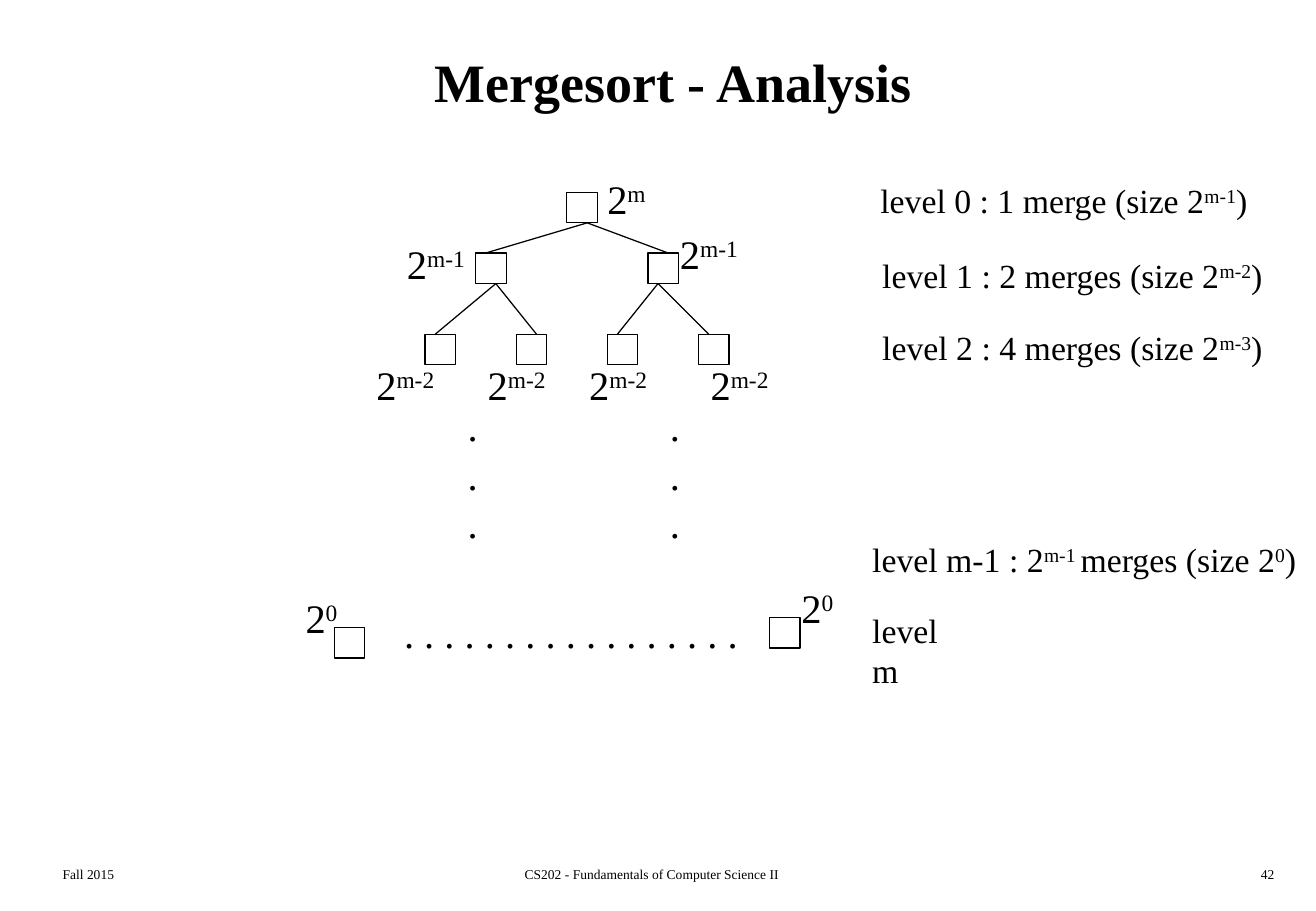
"""Build the slide that counts the merges on each level of a mergesort tree."""
from dataclasses import dataclass

from pptx import Presentation
from pptx.dml.color import RGBColor
from pptx.enum.shapes import MSO_CONNECTOR as Link, MSO_SHAPE as Kind
from pptx.enum.text import MSO_ANCHOR as Anchor, PP_ALIGN as Align
from pptx.oxml.ns import qn
from pptx.slide import Slide
from pptx.text.text import Font
from pptx.util import Cm, Pt
from lxml.etree import SubElement

BLACK = RGBColor(0x00, 0x00, 0x00)
WHITE = RGBColor(0xFF, 0xFF, 0xFF)
FACE = "Times New Roman"
SIDE = 0.64
THIN = Pt(0.75)
LEAD = 1.2


@dataclass
class Node:
    """A square of the tree, placed in centimetres."""
    left: float
    top: float


@dataclass
class Fork:
    """A parent point with the ends of its two branches."""
    x: float
    y: float
    ends: tuple[float, float]
    base: float


@dataclass
class Note:
    """A text whose superscripts stand between carets."""
    text: str
    left: float
    top: float
    width: float
    size: int = 24
    align: Align = Align.LEFT
    wrap: bool = False


NODES = [
    Node(11.85, 4.02),
    Node(9.95, 5.29), Node(13.55, 5.29),
    *[Node(8.89 + 1.905 * i, 6.99) for i in range(4)],
    Node(16.09, 12.91), Node(6.99, 13.12),
]
FORKS = [
    Fork(12.28, 4.66, (10.16, 13.97), 5.29),
    Fork(10.37, 5.93, (9.1, 11.22), 6.99),
    Fork(13.76, 5.93, (12.91, 14.82), 6.99),
]
NOTES = [
    Note("2^m", 12.45, 3.51, 1.37),
    Note("2^m-1", 8.26, 4.87, 1.85),
    Note("2^m-1", 13.97, 4.66, 1.85),
    *[Note("2^m-2", x, 7.41, 1.85) for x in (7.62, 9.95, 12.07, 14.61)],
    *[Note(".\n.\n.", x, 8.26, 0.71) for x in (9.53, 13.76)],
    Note("2^0", 6.14, 12.28, 1.22),
    Note("2^0", 16.51, 12.07, 1.22),
    Note(". . . . . . . . . . . . . . . . .", 8.2, 12.6, 7.49),
    Note("level 0 : 1 merge (size 2^m-1^)", 18.16, 3.63, 8.43, 20),
    Note("level 1 : 2 merges (size 2^m-2^)", 18.2, 5.21, 8.71, 20),
    Note("level 2 : 4 merges (size 2^m-3^)", 18.2, 6.7, 8.71, 20),
    Note("level m-1 : 2^m-1 ^merges (size 2^0^)", 17.99, 11.15, 9.65, 20),
    Note("level m", 17.99, 12.62, 2.59, 20),
    Note("Fall 2015", 1.06, 17.99, 5.74, 8, Align.LEFT, True),
    Note("CS202 - Fundamentals of Computer Science II",
         8.48, 17.99, 10.31, 8, Align.CENTER, True),
    Note("42", 21.16, 17.99, 5.74, 8, Align.RIGHT, True),
]


def style(font: Font, size: int, bold: bool = False) -> None:
    """Give a font the look of the slide."""
    font.name = FACE
    font.size = Pt(size)
    font.bold = bold
    font.color.rgb = BLACK


def head(slide: Slide, text: str) -> None:
    """Place and format the title."""
    title = slide.shapes.title
    title.left, title.top = Cm(1.06), Cm(0.42)
    title.width, title.height = Cm(26.04), Cm(2.54)
    frame = title.text_frame
    frame.text = text
    frame.vertical_anchor = Anchor.MIDDLE
    para = frame.paragraphs[0]
    para.alignment = Align.CENTER
    style(para.runs[0].font, 32, True)


def square(slide: Slide, node: Node) -> None:
    """Draw one node of the tree."""
    box = slide.shapes.add_shape(
        Kind.RECTANGLE, Cm(node.left), Cm(node.top), Cm(SIDE), Cm(SIDE))
    box.shadow.inherit = False
    box.fill.solid()
    box.fill.fore_color.rgb = WHITE
    box.line.color.rgb = BLACK
    box.line.width = THIN


def branch(slide: Slide, fork: Fork) -> None:
    """Draw the two lines below a parent."""
    for end in fork.ends:
        line = slide.shapes.add_connector(
            Link.STRAIGHT, Cm(fork.x), Cm(fork.y), Cm(end), Cm(fork.base))
        line.line.color.rgb = BLACK
        line.line.width = THIN
        SubElement(line._element.spPr, qn("a:effectLst"))


def write(slide: Slide, note: Note) -> None:
    """Write a text with its superscripts."""
    rows = note.text.split("\n")
    tall = Pt(LEAD * note.size * len(rows)) + Cm(0.25)
    box = slide.shapes.add_textbox(
        Cm(note.left), Cm(note.top), Cm(note.width), tall)
    frame = box.text_frame
    frame.text = "\n".join([""] * len(rows))
    frame.word_wrap = note.wrap
    for para, row in zip(frame.paragraphs, rows):
        para.alignment = note.align
        para.line_spacing = Pt(LEAD * note.size)
        for i, part in enumerate(filter(None, row.split("^"))):
            run = para.add_run()
            run.text = part
            style(run.font, note.size)
            if i % 2:
                run.font._element.set("baseline", "30000")


def main() -> None:
    """Build and save the slide."""
    deck = Presentation()
    deck.slide_width, deck.slide_height = Cm(27.52), Cm(19.05)
    slide = deck.slides.add_slide(deck.slide_layouts[5])
    head(slide, "Mergesort - Analysis")
    for node in NODES:
        square(slide, node)
    for fork in FORKS:
        branch(slide, fork)
    for note in NOTES:
        write(slide, note)
    deck.save("out.pptx")


if __name__ == "__main__":
    main()
